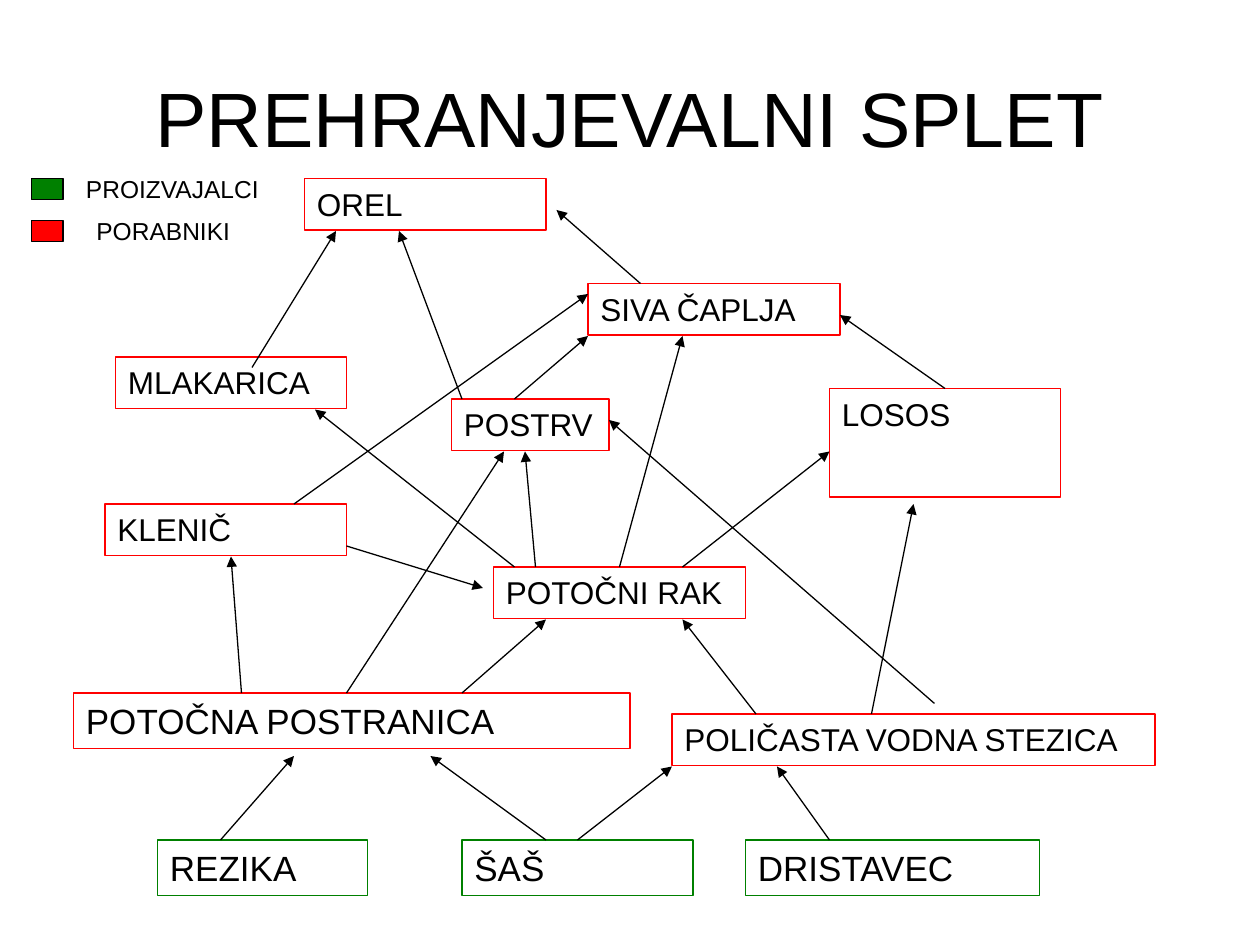
from dataclasses import dataclass

from lxml.etree import SubElement
from pptx import Presentation
from pptx.dml.color import RGBColor
from pptx.enum.shapes import MSO_CONNECTOR, MSO_SHAPE
from pptx.enum.text import MSO_ANCHOR, PP_ALIGN
from pptx.oxml.ns import qn
from pptx.util import Pt


@dataclass(frozen=True)
class Theme:
    font: str = "Arial"
    ink: RGBColor = RGBColor(0x00, 0x00, 0x00)
    producer: RGBColor = RGBColor(0x00, 0x80, 0x00)
    consumer: RGBColor = RGBColor(0xFF, 0x00, 0x00)
    title_size: int = 44
    large_size: int = 20
    organism_size: int = 18
    legend_size: int = 14
    line_width: float = 0.75


THEME = Theme()
GRID = 6  # points per grid unit
LARGE_HEIGHT, ORGANISM_HEIGHT, LOSOS_HEIGHT = 31.7, 29.5, 62

# Name, left, top and width in grid units, measured from the corner of the web
PRODUCERS = [
    ("REZIKA", 8, 63, 20),
    ("ŠAŠ", 37, 63, 22),
    ("DRISTAVEC", 64, 63, 28),
]
LARGE_CONSUMERS = [("POTOČNA POSTRANICA", 0, 49, 53)]
CONSUMERS = [
    ("POTOČNI RAK", 40, 37, 24),
    ("POSTRV", 36, 21, 15),
    ("SIVA ČAPLJA", 49, 10, 24),
    ("MLAKARICA", 4, 17, 22),
    ("OREL", 22, 0, 23),
    ("POLIČASTA VODNA STEZICA", 57, 51, 46),
    ("KLENIČ", 3, 31, 23),
]
TALL_CONSUMERS = [("LOSOS", 72, 20, 22)]

# Start and end of each arrow, from the eaten to the eater, in grid units
FEEDING = [
    # from the producers
    (45, 63, 34, 55), (14, 63, 21, 55), (72, 63, 67, 56), (48, 63, 57, 56),
    # from POTOČNA POSTRANICA
    (37, 49, 45, 42), (16, 49, 15, 36), (26, 49, 41, 26),
    # from POLIČASTA VODNA STEZICA
    (65, 51, 58, 42), (76, 51, 80, 31), (82, 50, 51, 23),
    # from KLENIČ
    (26, 35, 39, 39), (21, 31, 49, 11),
    # from POTOČNI RAK
    (44, 37, 43, 26), (58, 37, 72, 26), (42, 37, 23, 22), (52, 37, 58, 15),
    # from POSTRV, SIVA ČAPLJA, LOSOS and MLAKARICA
    (42, 21, 49, 15), (37, 21, 31, 5), (54, 10, 46, 3),
    (83, 20, 73, 13), (17, 18, 25, 5),
]


def format_text(frame, text, size, align=PP_ALIGN.LEFT, anchor=MSO_ANCHOR.TOP):
    frame.text = text
    frame.word_wrap = True
    frame.vertical_anchor = anchor
    paragraph = frame.paragraphs[0]
    paragraph.alignment = align
    paragraph.font.name = THEME.font
    paragraph.font.size = Pt(size)
    paragraph.font.color.rgb = THEME.ink


def add_box(slide, left, top, width, height, line, fill=None):
    box = slide.shapes.add_shape(
        MSO_SHAPE.RECTANGLE, Pt(left), Pt(top), Pt(width), Pt(height))
    box.shadow.inherit = False
    box.line.color.rgb = line
    box.line.width = Pt(THEME.line_width)
    if fill is None:
        box.fill.background()
    else:
        box.fill.solid()
        box.fill.fore_color.rgb = fill
    return box


def add_arrow(slide, x1, y1, x2, y2):
    arrow = slide.shapes.add_connector(
        MSO_CONNECTOR.STRAIGHT, Pt(x1), Pt(y1), Pt(x2), Pt(y2))
    arrow.line.color.rgb = THEME.ink
    arrow.line.width = Pt(THEME.line_width)
    SubElement(arrow.line._get_or_add_ln(), qn("a:tailEnd"), type="triangle")
    SubElement(arrow._element.spPr, qn("a:effectLst"))


def place_title(slide, left, top, width, height):
    title = slide.shapes.title
    title.left, title.top = Pt(left), Pt(top)
    title.width, title.height = Pt(width), Pt(height)
    format_text(title.text_frame, "PREHRANJEVALNI SPLET", THEME.title_size,
                PP_ALIGN.CENTER, MSO_ANCHOR.MIDDLE)


def place_legend(slide, left, top):
    entries = [("PROIZVAJALCI", THEME.producer, 24, 120),
               ("PORABNIKI", THEME.consumer, 30, 102)]
    for row, (label, color, indent, width) in enumerate(entries):
        row_top = top + row * 24
        add_box(slide, left, row_top + 6, 18, 12, THEME.ink, color)
        caption = slide.shapes.add_textbox(
            Pt(left + indent), Pt(row_top), Pt(width), Pt(24))
        format_text(caption.text_frame, label, THEME.legend_size)


def place_food_web(slide, left, top):
    groups = [
        (PRODUCERS, THEME.producer, THEME.large_size, LARGE_HEIGHT),
        (LARGE_CONSUMERS, THEME.consumer, THEME.large_size, LARGE_HEIGHT),
        (CONSUMERS, THEME.consumer, THEME.organism_size, ORGANISM_HEIGHT),
        (TALL_CONSUMERS, THEME.consumer, THEME.organism_size, LOSOS_HEIGHT),
    ]
    # Organisms
    for organisms, color, size, height in groups:
        for name, column, row, span in organisms:
            organism = add_box(slide, left + column * GRID, top + row * GRID,
                               span * GRID, height, color)
            format_text(organism.text_frame, name, size)
    # Who is eaten by whom
    for x1, y1, x2, y2 in FEEDING:
        add_arrow(slide, left + x1 * GRID, top + y1 * GRID,
                  left + x2 * GRID, top + y2 * GRID)


def main():
    deck = Presentation()
    deck.slide_width, deck.slide_height = Pt(720), Pt(540)
    slide = deck.slides.add_slide(deck.slide_layouts[5])  # title only
    place_title(slide, 36, 21.6, 648, 90)
    place_legend(slide, 18, 96)
    place_food_web(slide, 42, 102)
    deck.save("out.pptx")


if __name__ == "__main__":
    main()
